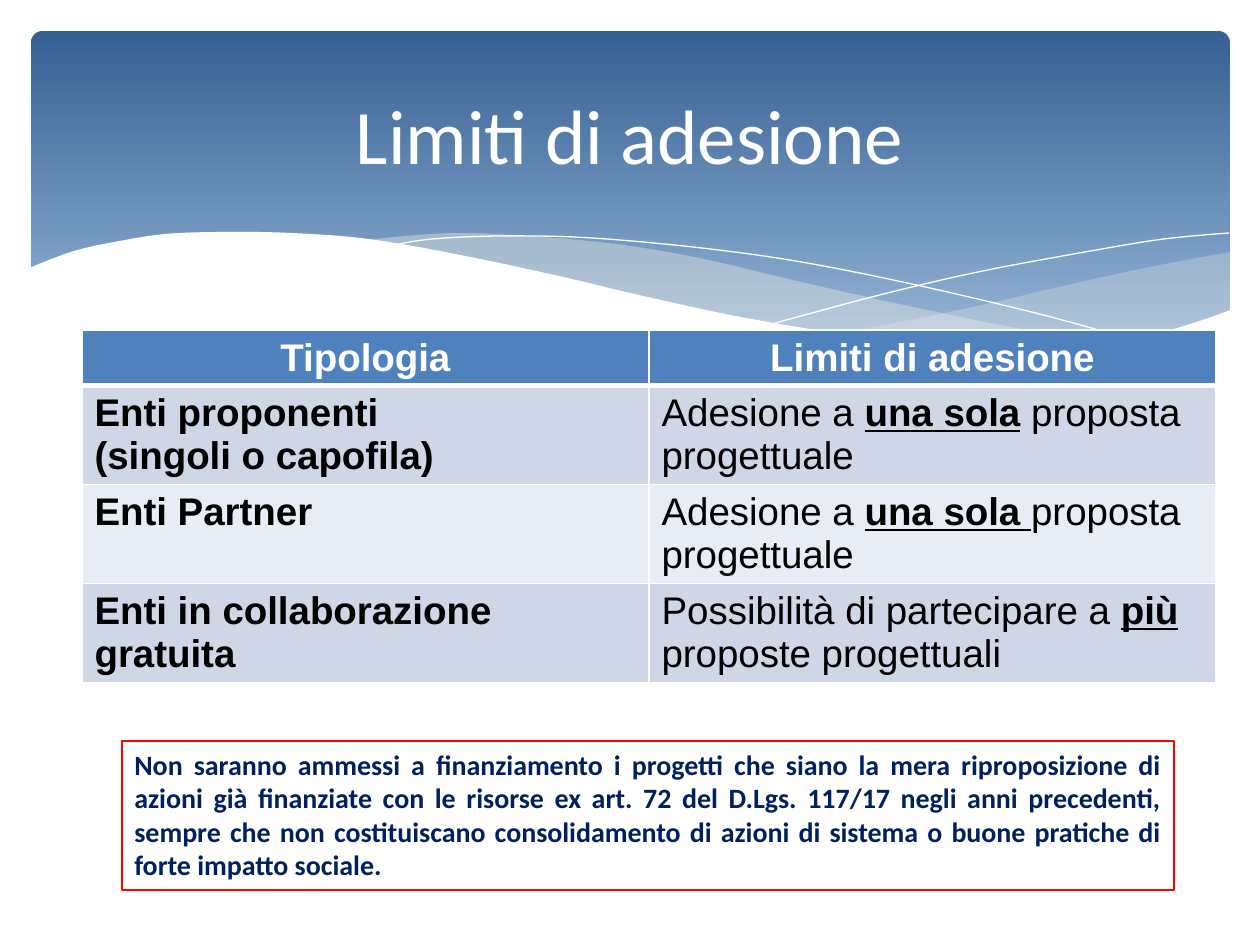
from lxml import etree
from pptx import Presentation
from pptx import util as u
from pptx.dml.color import RGBColor
from pptx.enum import shapes, text
from pptx.oxml import ns

SCALE = 914400 / 126
HUES = {
    "white": "FFFFFF", "black": "000000", "navy": "002060", "red": "FF0000",
    "deep": "366092", "sky": "93B3D7", "sand": "EEECE1",
    "head": "4F81BD", "dark": "CFD7E7", "pale": "E8ECF4",
}
ALIGN = {"l": text.PP_ALIGN.LEFT, "c": text.PP_ALIGN.CENTER, "j": text.PP_ALIGN.JUSTIFY}

RIGHT = [
    [(1230, 252), (1160, 265), (1085, 281), (982, 305), (890, 324), (833, 334)],
    [(833, 334), (888, 341), (954, 348), (1012, 350), (1076, 348), (1130, 340),
     (1178, 330), (1230, 311)],
]
MIDDLE = [
    [(1125, 344), (1017, 328), (890, 302), (793, 280), (699, 258), (616, 244),
     (529, 236), (455, 233), (394, 237), (360, 241)],
    [(360, 241), (431, 251), (509, 266), (566, 280), (668, 302), (757, 321),
     (838, 335), (910, 345), (974, 349), (1031, 350), (1080, 349), (1125, 344)],
]
FRONT = [
    [(1231, 310), (1184, 326), (1133, 339), (1071, 347), (1019, 349), (959, 347),
     (892, 340), (816, 330), (730, 315), (634, 294), (563, 277), (460, 255),
     (368, 239), (290, 233), (223, 232), (166, 234), (120, 241), (74, 251), (29, 268)],
    [(29, 415), (1231, 415)],
]
FALL = [[(389, 246), (433, 239), (505, 236), (591, 238), (701, 248), (801, 262),
         (916, 285), (1047, 316), (1143, 343)]]
RISE = [[(772, 324), (876, 296), (978, 272), (1091, 251), (1164, 239), (1229, 233)]]

ROWS = [
    ("Tipologia", "Limiti di adesione"),
    ("Enti proponenti\n(singoli o capofila)", "Adesione a |una sola| proposta progettuale"),
    ("Enti Partner", "Adesione a |una sola |proposta progettuale"),
    ("Enti in collaborazione gratuita", "Possibilità di partecipare a |più| proposte progettuali"),
]
NOTE = (
    "Non saranno ammessi a finanziamento i progetti che siano la mera riproposizione di "
    "azioni già finanziate con le risorse ex art. 72 del D.Lgs. 117/17 negli anni precedenti, "
    "sempre che non costituiscano consolidamento di azioni di sistema o buone pratiche di "
    "forte impatto sociale."
)


def px(*vals):
    return [u.Emu(round(v * SCALE)) for v in vals]


def hue(name):
    return RGBColor.from_string(HUES[name])


def write(frame, words, font="Calibri", size=16, color="black", bold=False, align="l"):
    frame.word_wrap = True
    for i, line in enumerate(words.split("\n")):
        para = frame.paragraphs[0] if i == 0 else frame.add_paragraph()
        para.alignment = ALIGN[align]
        for j, part in enumerate(line.split("|")):
            run = para.add_run()
            run.text = part
            face = run.font
            face.name, face.size = font, u.Pt(size)
            face.color.rgb = hue(color)
            face.bold = bold or j % 2 == 1
            face.underline = j % 2 == 1


def smooth(knots, steps=5):
    ends = [knots[0], *knots, knots[-1]]
    dots = [knots[0]]
    for a, b, c, d in zip(ends, ends[1:], ends[2:], ends[3:]):
        for k in range(1, steps + 1):
            t = k / steps
            dots.append(tuple(
                q + t / 2 * (r - p + t * (2 * p - 5 * q + 4 * r - s + t * (3 * q - p - 3 * r + s)))
                for p, q, r, s in zip(a, b, c, d)))
    return dots


def curve(slide, parts, fill=None, alpha=None, line=None):
    dots = [px(*dot) for part in parts for dot in smooth(part)]
    pen = slide.shapes.build_freeform(*dots[0], scale=1.0)
    pen.add_line_segments(dots[1:], close=fill is not None)
    shape = pen.convert_to_shape()
    shape.shadow.inherit = False
    if fill:
        shape.fill.solid()
        shape.fill.fore_color.rgb = hue(fill)
    else:
        shape.fill.background()
    if alpha:
        tint = shape.fill._xPr.find(".//" + ns.qn("a:srgbClr"))
        etree.SubElement(tint, ns.qn("a:alpha"), val=str(alpha * 1000))
    if line:
        shape.line.color.rgb = hue(line)
        shape.line.width = u.Pt(0.75)
    else:
        shape.line.fill.background()


def banner(slide):
    shape = slide.shapes.add_shape(shapes.MSO_SHAPE.ROUNDED_RECTANGLE, *px(31, 31, 1199, 340))
    shape.adjustments[0] = 0.034
    shape.shadow.inherit = False
    shape.line.fill.background()
    shape.fill.gradient()
    shape.fill.gradient_angle = 270
    for stop, name, spot in zip(shape.fill.gradient_stops, ("deep", "sky"), (0, 0.9)):
        stop.color.rgb = hue(name)
        stop.position = spot


def title(slide, words):
    shape = slide.shapes.title
    shape.left, shape.top, shape.width, shape.height = px(63, 47, 1134, 173)
    shape.text_frame.vertical_anchor = text.MSO_ANCHOR.MIDDLE
    write(shape.text_frame, words, size=44, color="white", align="c")
    slide.shapes._spTree.append(shape._element)


def border(cell, head):
    props = cell._tc.get_or_add_tcPr()
    for i, side in enumerate(("lnL", "lnR", "lnT", "lnB")):
        width = 3 if head and side == "lnB" else 1
        edge = etree.Element(ns.qn("a:" + side), w=str(u.Pt(width)))
        fill = etree.SubElement(edge, ns.qn("a:solidFill"))
        etree.SubElement(fill, ns.qn("a:srgbClr"), val=HUES["white"])
        props.insert(i, edge)


def grid(slide, rows):
    table = slide.shapes.add_table(len(rows), 2, *px(82, 330, 1134, 351)).table
    for i, row in enumerate(rows):
        head = i == 0
        table.rows[i].height = px(54 if head else 99)[0]
        for j, words in enumerate(row):
            cell = table.cell(i, j)
            cell.fill.solid()
            cell.fill.fore_color.rgb = hue("head" if head else "dark" if i % 2 else "pale")
            border(cell, head or (i == 1 and False))
            write(cell.text_frame, words, font="Arial", size=22,
                  color="white" if head else "black", bold=head or j == 0,
                  align="c" if head else "l")
    for cell in table.rows[1].cells:
        cell._tc.tcPr.find(ns.qn("a:lnT")).set("w", str(u.Pt(3)))


def note(slide, words):
    box = slide.shapes.add_textbox(*px(122, 741, 1052, 149))
    box.line.color.rgb = hue("red")
    box.line.width = u.Pt(0.75)
    write(box.text_frame, words, color="navy", bold=True, align="j")
    box.text_frame.auto_size = text.MSO_AUTO_SIZE.SHAPE_TO_FIT_TEXT


def main():
    deck = Presentation()
    deck.slide_width, deck.slide_height = px(1260, 945)
    slide = deck.slides.add_slide(deck.slide_layouts[5])
    banner(slide)
    curve(slide, RIGHT, fill="sand", alpha=29)
    curve(slide, MIDDLE, fill="sand", alpha=40)
    curve(slide, FALL, line="white")
    curve(slide, RISE, line="white")
    curve(slide, FRONT, fill="white")
    grid(slide, ROWS)
    title(slide, "Limiti di adesione")
    note(slide, NOTE)
    deck.save("out.pptx")


if __name__ == "__main__":
    main()
